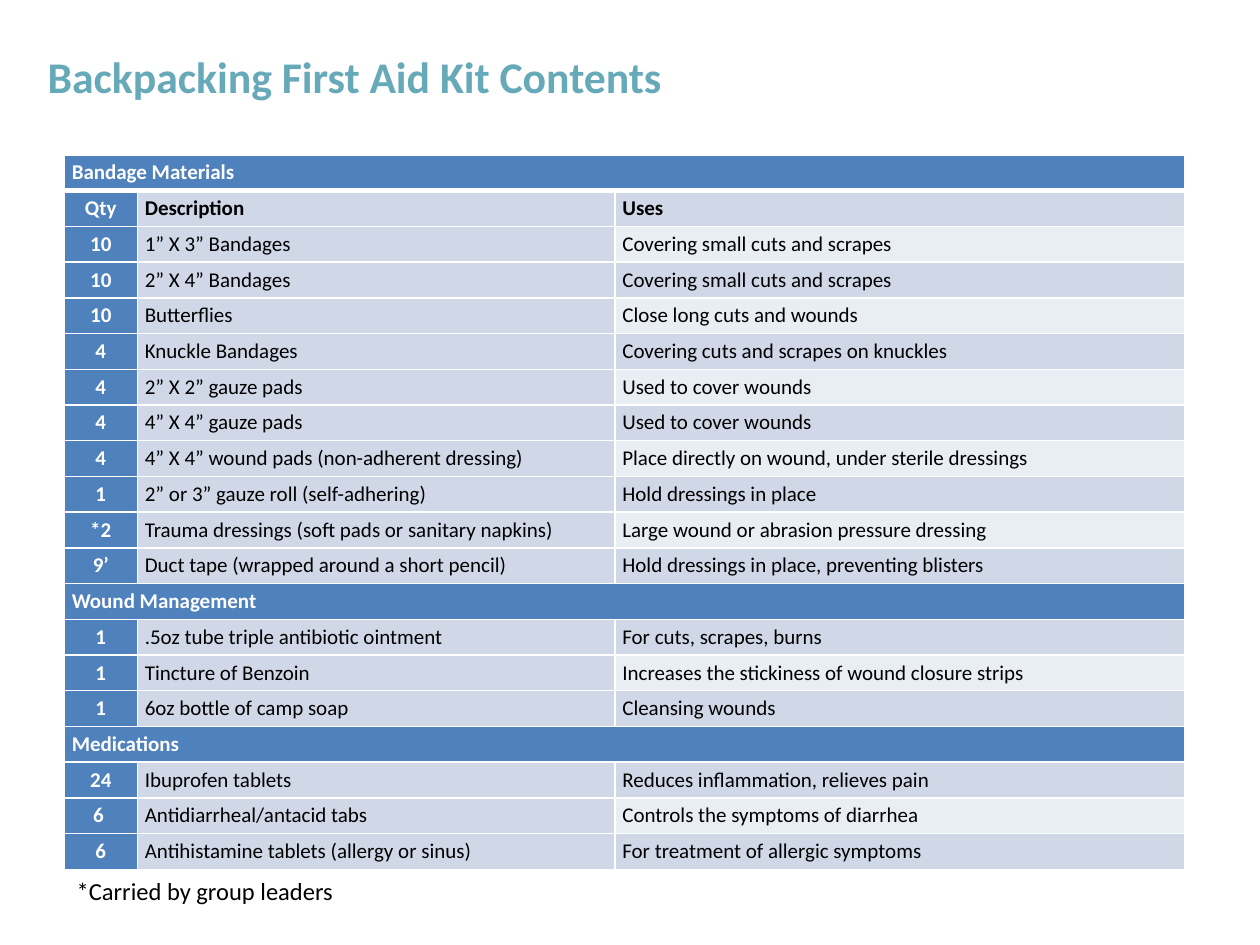
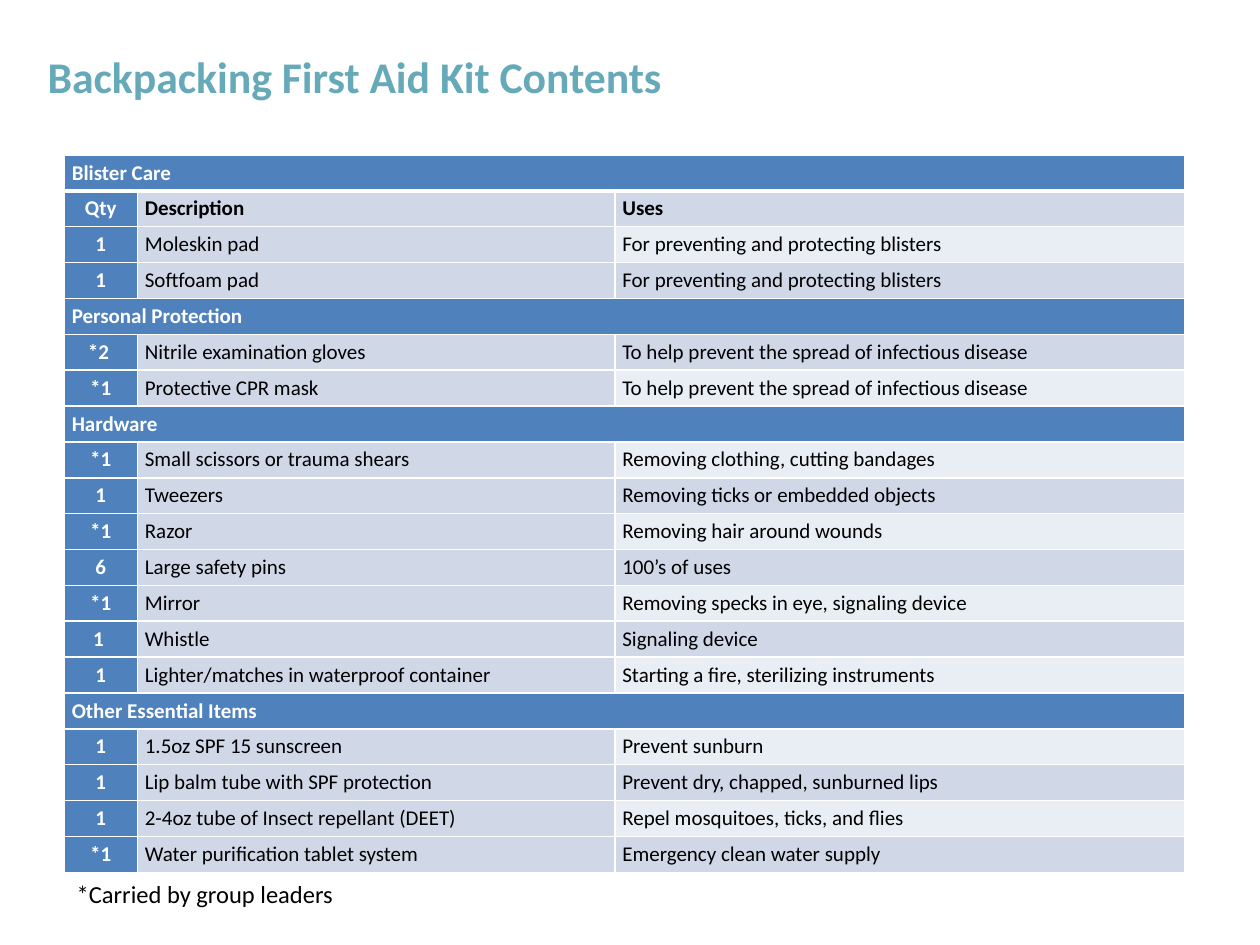
from lxml.etree import SubElement
from pptx import Presentation
from pptx.dml.color import RGBColor
from pptx.enum.text import MSO_ANCHOR as Anchor, PP_ALIGN as Align
from pptx.oxml.ns import qn
from pptx.util import Inches, Pt

FONT = "Calibri"
TEAL, BLUE, WHITE, BLACK = "66A9B8", "4F81BD", "FFFFFF", "000000"
BAND_DARK, BAND_LIGHT = "D0D8E8", "E9EDF4"

TITLE = "Backpacking First Aid Kit Contents"
FOOTNOTE = "*Carried by group leaders"
COLUMN_HEADINGS = ("Qty", "Description", "Uses")
COLUMN_WIDTHS = (0.58, 3.79, 4.52)
TABLE_LEFT, TABLE_TOP = 0.51, 1.23

# Each kit page: table height, then sections of (quantity, description, use).
KIT_PAGES = [
    (5.67, {
        "Bandage Materials": [
            ("10", "1” X 3” Bandages", "Covering small cuts and scrapes"),
            ("10", "2” X 4” Bandages", "Covering small cuts and scrapes"),
            ("10", "Butterflies", "Close long cuts and wounds"),
            ("4", "Knuckle Bandages", "Covering cuts and scrapes on knuckles"),
            ("4", "2” X 2” gauze pads", "Used to cover wounds"),
            ("4", "4” X 4” gauze pads", "Used to cover wounds"),
            ("4", "4” X 4” wound pads (non-adherent dressing)",
             "Place directly on wound, under sterile dressings"),
            ("1", "2” or 3” gauze roll (self-adhering)", "Hold dressings in place"),
            ("*2", "Trauma dressings (soft pads or sanitary napkins)",
             "Large wound or abrasion pressure dressing"),
            ("9’", "Duct tape (wrapped around a short pencil)",
             "Hold dressings in place, preventing blisters"),
        ],
        "Wound Management": [
            ("1", ".5oz tube triple antibiotic ointment", "For cuts, scrapes, burns"),
            ("1", "Tincture of Benzoin",
             "Increases the stickiness of wound closure strips"),
            ("1", "6oz bottle of camp soap", "Cleansing wounds"),
        ],
        "Medications": [
            ("24", "Ibuprofen tablets", "Reduces inflammation, relieves pain"),
            ("6 ", "Antidiarrheal/antacid tabs", "Controls the symptoms of diarrhea"),
            ("6", "Antihistamine tablets (allergy or sinus)",
             "For treatment of allergic symptoms"),
        ],
    }),
    (5.7, {
        "Blister Care": [
            ("1", "Moleskin pad", "For preventing and protecting blisters"),
            ("1", "Softfoam pad", "For preventing and protecting blisters"),
        ],
        "Personal Protection": [
            ("*2 ", "Nitrile examination gloves",
             "To help prevent the spread of infectious disease"),
            ("*1", "Protective CPR mask",
             "To help prevent the spread of infectious disease"),
        ],
        "Hardware": [
            ("*1", "Small scissors or trauma shears",
             "Removing clothing, cutting bandages"),
            ("1", "Tweezers", "Removing ticks or embedded objects"),
            ("*1", "Razor", "Removing hair around wounds"),
            ("6", "Large safety pins", "100’s of uses"),
            ("*1", "Mirror", "Removing specks in eye, signaling device"),
            ("1 ", "Whistle", "Signaling device"),
            ("1", "Lighter/matches in waterproof container",
             "Starting a fire, sterilizing instruments"),
        ],
        "Other Essential Items": [
            ("1", "1.5oz SPF 15 sunscreen", "Prevent sunburn"),
            ("1", "Lip balm tube with SPF protection",
             "Prevent dry, chapped, sunburned lips"),
            ("1", "2-4oz tube of Insect repellant (DEET)",
             "Repel mosquitoes, ticks, and flies"),
            ("*1", "Water purification tablet system", "Emergency clean water supply"),
        ],
    }),
]


def color(hex_code):
    return RGBColor.from_string(hex_code)


def add_run(paragraph, text, size, hex_code, bold=False):
    run = paragraph.add_run()
    run.text = text
    run.font.name = FONT
    run.font.size = Pt(size)
    run.font.bold = bold
    run.font.color.rgb = color(hex_code)


def add_text(slide, position, text, size, hex_code, bold=False, anchor=Anchor.TOP):
    box = slide.shapes.add_textbox(*(Inches(length) for length in position))
    box.text_frame.word_wrap = True
    box.text_frame.vertical_anchor = anchor
    add_run(box.text_frame.paragraphs[0], text, size, hex_code, bold)


def set_borders(cell, top, bottom):
    """Draw white cell borders: 1 pt at the sides, given points above and below."""
    properties = cell._tc.get_or_add_tcPr()
    for side, points in (("L", 1), ("R", 1), ("T", top), ("B", bottom)):
        line = SubElement(properties, qn(f"a:ln{side}"), w=str(Pt(points)))
        fill = SubElement(line, qn("a:solidFill"))
        SubElement(fill, qn("a:srgbClr"), val=WHITE)


def style_cell(cell, fill, row):
    set_borders(cell, top=3 if row == 1 else 1, bottom=3 if row == 0 else 1)
    cell.fill.solid()
    cell.fill.fore_color.rgb = color(fill)
    cell.vertical_anchor = Anchor.MIDDLE
    cell.margin_left = cell.margin_right = Inches(0.06)
    cell.margin_top = cell.margin_bottom = 0


def list_rows(sections):
    """Flatten sections to table rows; a section heading is a one-item row."""
    rows = []
    for heading, items in sections.items():
        rows.append((heading,))
        if len(rows) == 1:
            rows.append(COLUMN_HEADINGS)
        rows.extend(items)
    return rows


def add_kit_table(slide, height, sections):
    rows = list_rows(sections)
    table = slide.shapes.add_table(
        len(rows), len(COLUMN_WIDTHS), Inches(TABLE_LEFT), Inches(TABLE_TOP),
        Inches(sum(COLUMN_WIDTHS)), Inches(height)).table
    table.first_row = table.horz_banding = False
    for column, width in zip(table.columns, COLUMN_WIDTHS):
        column.width = Inches(width)

    for row, texts in enumerate(rows):
        is_section = len(texts) == 1
        use_fill = BAND_DARK if row % 2 else BAND_LIGHT
        fills = [BLUE] * 3 if is_section else [BLUE, BAND_DARK, use_fill]
        for column, fill in enumerate(fills):
            style_cell(table.cell(row, column), fill, row)
        if is_section:
            table.cell(row, 0).merge(table.cell(row, len(COLUMN_WIDTHS) - 1))
        for column, text in enumerate(texts):
            paragraph = table.cell(row, column).text_frame.paragraphs[0]
            if column == 0 and not is_section:
                paragraph.alignment = Align.CENTER
            add_run(paragraph, text, 12, BLACK if column else WHITE,
                    bold=column == 0 or texts is COLUMN_HEADINGS)


def add_kit_slide(presentation, height, sections):
    slide = presentation.slides.add_slide(presentation.slide_layouts[6])
    add_text(slide, (0.28, 0.17, 9.21, 0.87), TITLE, 25, TEAL, True, Anchor.MIDDLE)
    add_kit_table(slide, height, sections)
    add_text(slide, (TABLE_LEFT, TABLE_TOP + height, 4.49, 0.34), FOOTNOTE, 14, BLACK)


def main():
    presentation = Presentation()
    presentation.slide_width, presentation.slide_height = Inches(10), Inches(7.5)
    for height, sections in KIT_PAGES:
        add_kit_slide(presentation, height, sections)
    presentation.save("out.pptx")


if __name__ == "__main__":
    main()
